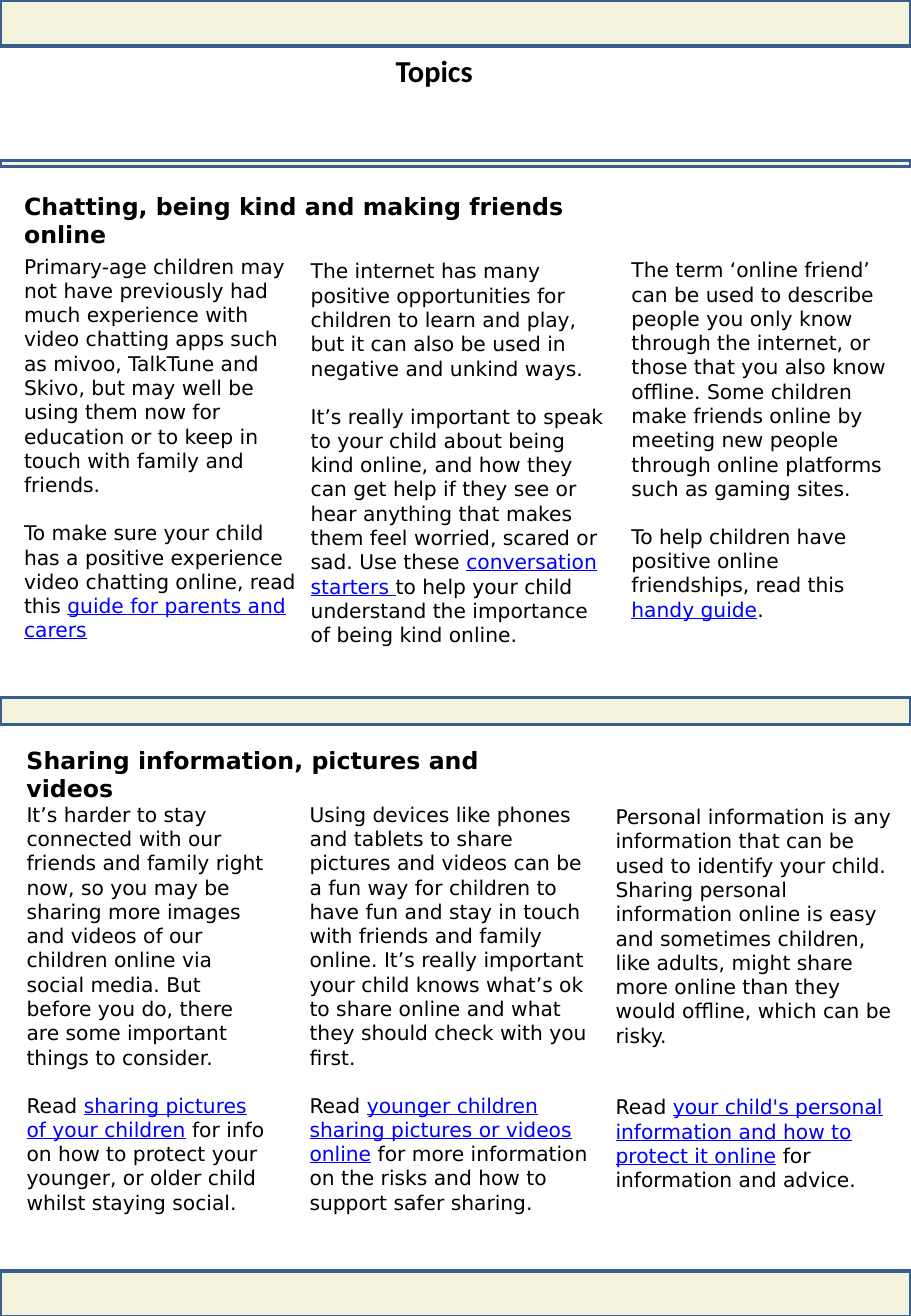
from pptx import Presentation, util as u
from pptx.dml.color import RGBColor
from pptx.enum import shapes, text

COLS, ROWS = 75, 108.3


def tint(code):
    return RGBColor.from_string(code)


class Page:
    face, ink, link = "DejaVu Sans", "000000", "0000FF"
    fill, edge = "F3F3DD", "3A5F8C"

    def __init__(self, deck):
        self.slide = deck.slides.add_slide(deck.slide_layouts[6])
        self.col = deck.slide_width / COLS
        self.row = deck.slide_height / ROWS

    def place(self, x, y, w, h):
        return [round(n) for n in (x * self.col, y * self.row,
                                   w * self.col, h * self.row)]

    def bar(self, y, h):
        rect = self.slide.shapes.add_shape(
            shapes.MSO_SHAPE.RECTANGLE, *self.place(0, y, COLS, h))
        rect.shadow.inherit = False
        rect.fill.solid()
        rect.fill.fore_color.rgb = tint(self.fill)
        rect.line.color.rgb = tint(self.edge)
        rect.line.width = u.Pt(2)

    def box(self, x, y, w, h):
        frame = self.slide.shapes.add_textbox(*self.place(x, y, w, h)).text_frame
        frame.word_wrap = True
        return frame

    def style(self, para, size, bold=False, face=None):
        font = para.font
        font.name, font.size, font.bold = face or self.face, u.Pt(size), bold
        font.color.rgb = tint(self.ink)

    def head(self, words, x, y, w, h, size=14, face=None, align=text.PP_ALIGN.LEFT):
        para = self.box(x, y, w, h).paragraphs[0]
        para.text, para.alignment = words, align
        self.style(para, size, True, face)

    def story(self, x, y, w, h, intro, lead, link, tail, gap=14):
        frame = self.box(x, y, w, h)
        first, last = frame.paragraphs[0], frame.add_paragraph()
        first.text = intro
        last.space_before = u.Pt(gap)
        for para in (first, last):
            self.style(para, 12)
        for words in (lead, link, tail):
            if words:
                run = last.add_run()
                run.text = words
                if words == link:
                    run.font.underline = True
                    run.font.color.rgb = tint(self.link)


BARS = [(0, 3.8), (13.2, 0.5), (57.4, 2.2), (104.6, 3.8)]

HEADS = [
    ("Chatting, being kind and making friends online", 1, 15.3, 53.6, 5.4),
    ("Sharing information, pictures and videos", 1.2, 60.9, 45, 5.4),
]

STORIES = [
    (1, 20.4, 24.7, 33.3,
     "Primary-age children may not have previously had much experience with "
     "video chatting apps such as mivoo, TalkTune and Skivo, but may well be "
     "using them now for education or to keep in touch with family and friends.",
     "To make sure your child has a positive experience video chatting online, "
     "read this ",
     "guide for parents and carers", ""),
    (24.6, 20.8, 26.3, 33.3,
     "The internet has many positive opportunities for children to learn and "
     "play, but it can also be used in negative and unkind ways.",
     "It’s really important to speak to your child about being kind online, and "
     "how they can get help if they see or hear anything that makes them feel "
     "worried, scared or sad. Use these ",
     "conversation starters ",
     "to help your child understand the importance of being kind online."),
    (51, 20.7, 23.8, 31.3,
     "The term ‘online friend’ can be used to describe people you only know "
     "through the internet, or those that you also know offline. Some children "
     "make friends online by meeting new people through online platforms such "
     "as gaming sites.",
     "To help children have positive online friendships, read this ",
     "handy guide", "."),
    (1.2, 65.5, 21.9, 35.3,
     "It’s harder to stay connected with our friends and family right now, so "
     "you may be sharing more images and videos of our children online via "
     "social media. But before you do, there are some important things to "
     "consider.",
     "Read ", "sharing pictures of your children",
     " for info on how to protect your younger, or older child whilst staying "
     "social."),
    (24.5, 65.5, 25.2, 35.3,
     "Using devices like phones and tablets to share pictures and videos can be "
     "a fun way for children to have fun and stay in touch with friends and "
     "family online. It’s really important your child knows what’s ok to share "
     "online and what they should check with you first.",
     "Read ", "younger children sharing pictures or videos online",
     " for more information on the risks and how to support safer sharing."),
    (49.7, 65.7, 24.7, 33.3,
     "Personal information is any information that can be used to identify your "
     "child. Sharing personal information online is easy and sometimes children, "
     "like adults, might share more online than they would offline, which can be "
     "risky.",
     "Read ", "your child's personal information and how to protect it online",
     " for information and advice.", 28),
]


def main():
    deck = Presentation()
    deck.slide_width, deck.slide_height = u.Inches(7.5), u.Inches(10.83)
    page = Page(deck)
    for bar in BARS:
        page.bar(*bar)
    page.head("Topics", 13.4, 3.8, 44.7, 7.4, 18, "Calibri", text.PP_ALIGN.CENTER)
    for head in HEADS:
        page.head(*head)
    for story in STORIES:
        page.story(*story)
    deck.save("out.pptx")


if __name__ == "__main__":
    main()
